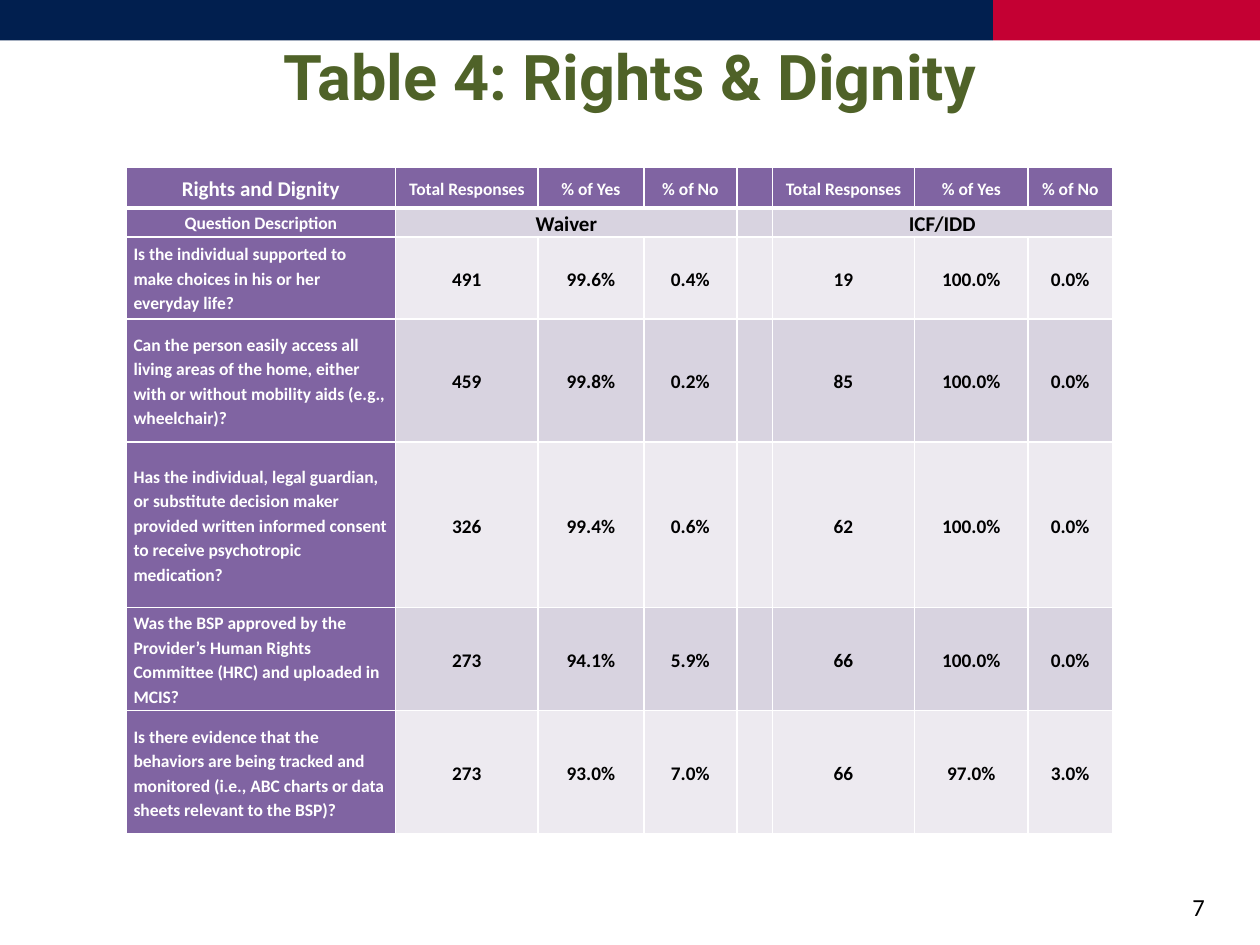
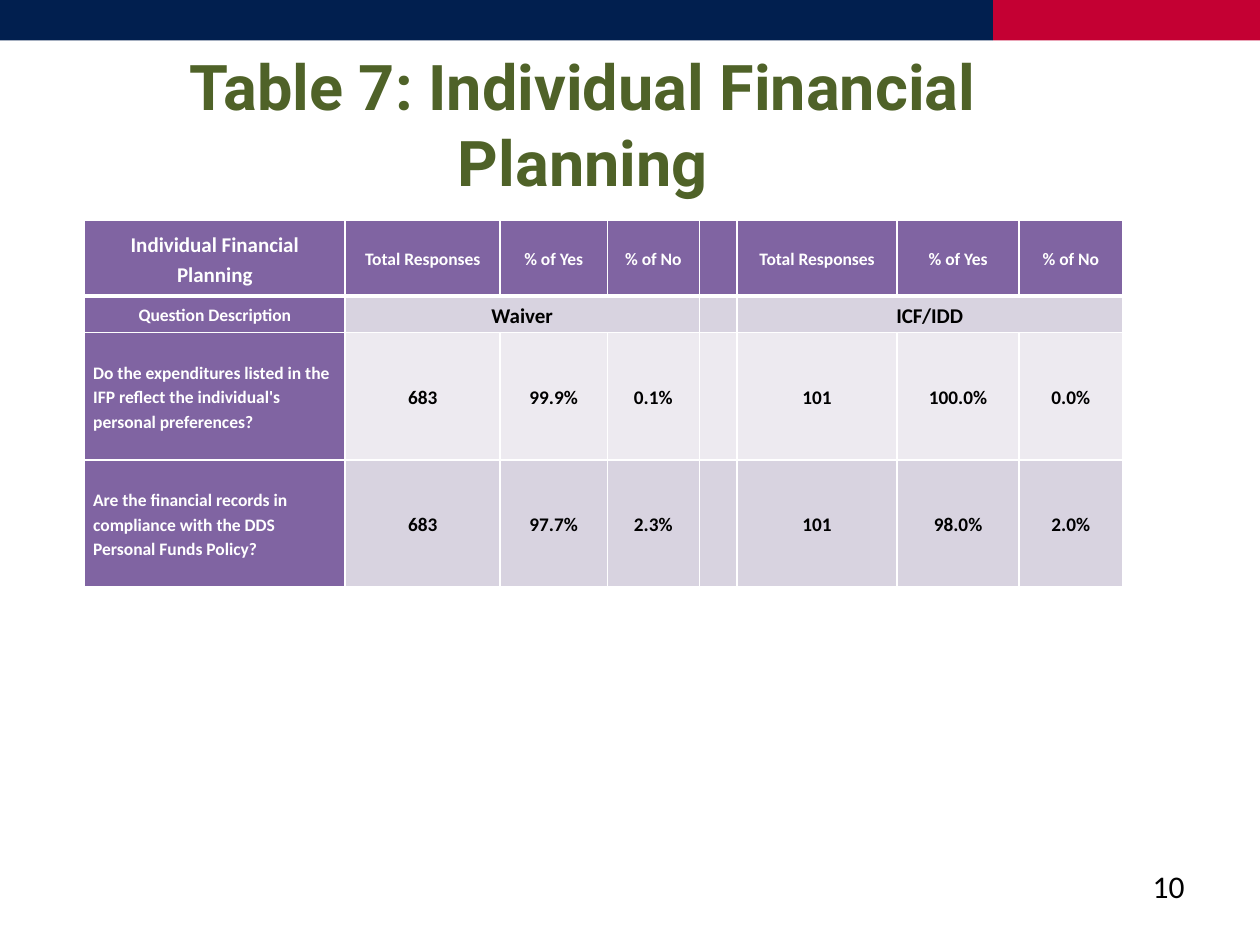
from lxml import etree
from pptx import Presentation
from pptx.dml.color import RGBColor
from pptx.enum.shapes import MSO_SHAPE
from pptx.enum.text import MSO_ANCHOR, PP_ALIGN
from pptx.oxml.ns import qn
from pptx.util import Inches, Pt

RECT = MSO_SHAPE.RECTANGLE
TOP, MIDDLE = MSO_ANCHOR.TOP, MSO_ANCHOR.MIDDLE
LEFT, CENTER, RIGHT = PP_ALIGN.LEFT, PP_ALIGN.CENTER, PP_ALIGN.RIGHT

NAVY = RGBColor(0x01, 0x1F, 0x4F)
RED = RGBColor(0xC4, 0x00, 0x33)
OLIVE = RGBColor(0x4F, 0x62, 0x28)
PURPLE = RGBColor(0x80, 0x64, 0xA2)
LILAC = RGBColor(0xD8, 0xD3, 0xE0)
PALE = RGBColor(0xED, 0xEA, 0xF0)
WHITE = RGBColor(0xFF, 0xFF, 0xFF)
BLACK = RGBColor(0x00, 0x00, 0x00)

HEAD_FONT, BODY_FONT = "Roboto", "Calibri"
MEASURES = ["Total Responses", "% of Yes", "% of No"]
GROUPS = ["Question Description", "Waiver", "", "", "", "ICF/IDD", "", ""]
SPANS = [(1, 3), (5, 7)]

RIGHTS = [
    ["Is the individual supported to make choices in his or her everyday life?",
     "491", "99.6%", "0.4%", "", "19", "100.0%", "0.0%"],
    ["Can the person easily access all living areas of the home, either with "
     "or without mobility aids (e.g., wheelchair)?",
     "459", "99.8%", "0.2%", "", "85", "100.0%", "0.0%"],
    ["Has the individual, legal guardian, or substitute decision maker provided "
     "written informed consent to receive psychotropic medication?",
     "326", "99.4%", "0.6%", "", "62", "100.0%", "0.0%"],
    ["Was the BSP approved by the Provider’s Human Rights Committee (HRC) and "
     "uploaded in MCIS?",
     "273", "94.1%", "5.9%", "", "66", "100.0%", "0.0%"],
    ["Is there evidence that the behaviors are being tracked and monitored "
     "(i.e., ABC charts or data sheets relevant to the BSP)?",
     "273", "93.0%", "7.0%", "", "66", "97.0%", "3.0%"],
]
FINANCE = [
    ["Do the expenditures listed in the IFP reflect the individual's personal "
     "preferences?",
     "683", "99.9%", "0.1%", "", "101", "100.0%", "0.0%"],
    ["Are the financial records in compliance with the DDS Personal Funds Policy?",
     "683", "97.7%", "2.3%", "", "101", "98.0%", "2.0%"],
]


def inch(box):
    return [Inches(side) for side in box]


def rule(cell, top, bottom):
    """Draw white cell borders; top and bottom are widths in points."""
    props = cell._tc.get_or_add_tcPr()
    widths = {"a:lnL": 1, "a:lnR": 1, "a:lnT": top, "a:lnB": bottom}
    for place, (tag, width) in enumerate(widths.items()):
        line = etree.Element(qn(tag), w=str(Pt(width)))
        fill = etree.SubElement(line, qn("a:solidFill"))
        etree.SubElement(fill, qn("a:srgbClr"), val=str(WHITE))
        props.insert(place, line)


class Deck:
    def __init__(self):
        self.prs = Presentation()
        self.prs.slide_width, self.prs.slide_height = Inches(10), Inches(7.5)
        self.slide = None

    def start(self, title, box):
        """Add a slide with its top bands and its title."""
        self.slide = self.prs.slides.add_slide(self.prs.slide_layouts[5])
        self.band((7.88, 0, 2.12, 0.32), RED)
        self.band((0, 0, 7.88, 0.32), NAVY)
        shape = self.slide.shapes.title
        shape.left, shape.top, shape.width, shape.height = inch(box)
        frame = shape.text_frame
        frame.word_wrap = True
        frame.vertical_anchor = TOP
        self.text(frame, title, 36, OLIVE, CENTER, HEAD_FONT, True)

    def band(self, box, color):
        shape = self.slide.shapes.add_shape(RECT, *inch(box))
        shape.shadow.inherit = False
        shape.fill.solid()
        shape.fill.fore_color.rgb = color
        shape.line.fill.background()

    def text(self, frame, words, size, color, align, font=BODY_FONT, bold=False):
        para = frame.paragraphs[0]
        para.alignment = align
        run = para.add_run()
        run.text = words
        run.font.size, run.font.name, run.font.bold = Pt(size), font, bold
        run.font.color.rgb = color
        return para

    def number(self, words, box, size, anchor):
        frame = self.slide.shapes.add_textbox(*inch(box)).text_frame
        frame.word_wrap = True
        frame.vertical_anchor = anchor
        self.text(frame, words, size, BLACK, RIGHT)

    def cell(self, cell, words, row, col, pad):
        """Style a cell by its place: head row, group row, or data row."""
        cell.margin_left = cell.margin_right = Inches(pad)
        cell.margin_top = cell.margin_bottom = 0
        cell.vertical_anchor = MIDDLE
        head = row == 0 or col == 0
        cell.fill.solid()
        cell.fill.fore_color.rgb = PURPLE if head else LILAC if row % 2 else PALE
        rule(cell, 3 if row == 1 else 1, 3 if row == 0 else 1)
        if not words:
            para = cell.text_frame.paragraphs[0]
            etree.SubElement(para._p, qn("a:endParaRPr"), sz="1000")
            return
        if head:
            size = 12 if row == col else 10
        else:
            size = 12 if row == 1 else 11
        align = LEFT if col == 0 and row > 1 else CENTER
        para = self.text(cell.text_frame, words, size, WHITE if head else BLACK,
                         align, bold=True)
        para.line_spacing = 1.15
        if row > 1 and col:
            para.space_after = Pt(10)

    def table(self, topic, data, spot, cols, rows, pads):
        """Add a survey table; pads are side margins of labels and of values."""
        lines = [[topic, *MEASURES, "", *MEASURES], GROUPS, *data]
        size = (sum(cols), sum(rows))
        table = self.slide.shapes.add_table(
            len(rows), len(cols), *inch(spot + size)).table
        for col, width in zip(table.columns, cols):
            col.width = Inches(width)
        for line, height in zip(table.rows, rows):
            line.height = Inches(height)
        for row, line in enumerate(lines):
            for col, words in enumerate(line):
                pad = pads[row > 1 and col > 0]
                self.cell(table.cell(row, col), words, row, col, pad)
        for first, last in SPANS:
            table.cell(1, first).merge(table.cell(1, last))


def main():
    deck = Deck()

    deck.start("Table 4: Rights & Dignity", (0.5, 0.25, 9, 1))
    deck.number("7", (7.33, 7, 2.33, 0.4), 14, MIDDLE)
    deck.table("Rights and Dignity", RIGHTS, (1, 1.33),
               (2.14, 1.13, 0.84, 0.74, 0.28, 1.13, 0.9, 0.67),
               (0.32, 0.23, 0.65, 0.98, 1.31, 0.82, 0.98), (0.06, 0.07))

    deck.start("Table 7: Individual Financial Planning", (0.5, 0.33, 8.25, 1.25))
    deck.number("10", (7.17, 6.83, 2.33, 0.5), 18, TOP)
    deck.table("Individual Financial Planning", FINANCE, (0.67, 1.75),
               (2.07, 1.23, 0.85, 0.73, 0.3, 1.27, 0.97, 0.82),
               (0.6, 0.29, 1.01, 1.01), (0.07, 0.07))

    deck.prs.save("out.pptx")


if __name__ == "__main__":
    main()
